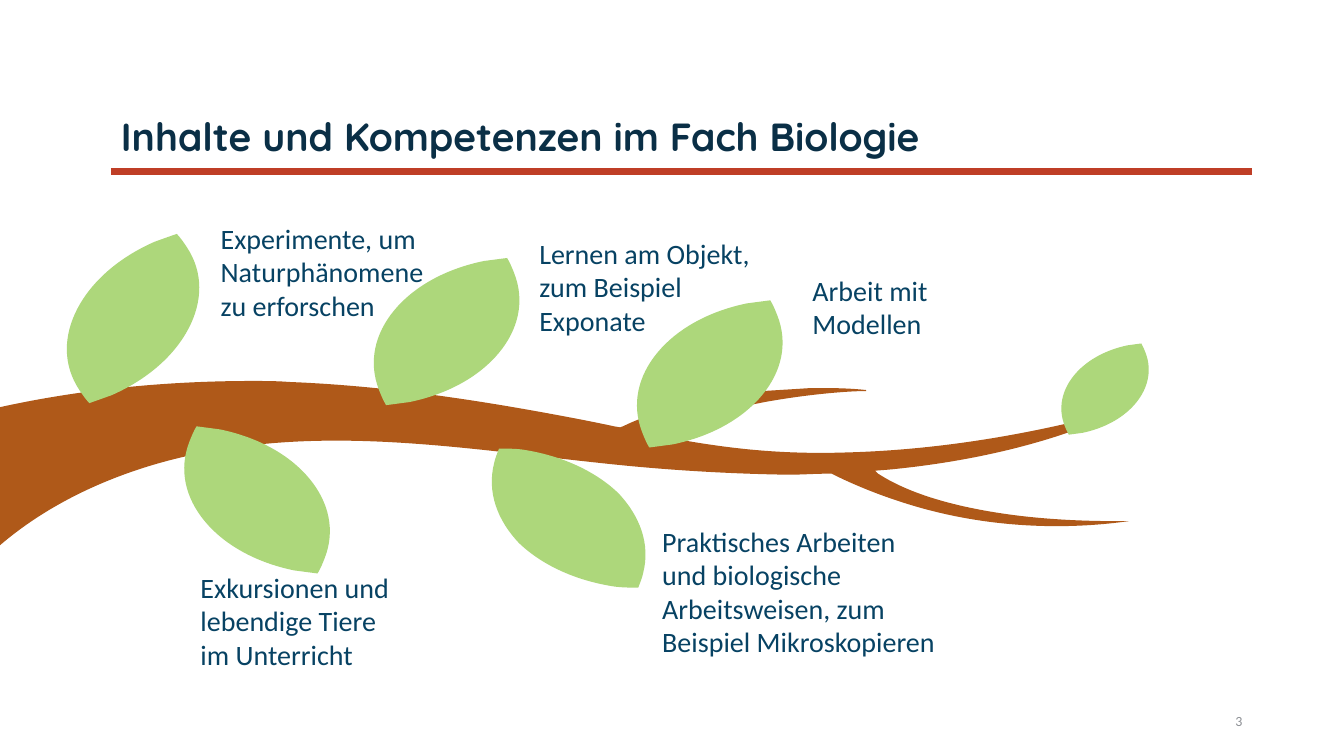
from lxml import etree
from pptx import Presentation
from pptx.dml.color import RGBColor
from pptx.enum import shapes, text
from pptx.oxml.ns import qn
from pptx.util import Inches, Pt

NAVY = RGBColor(0x0A, 0x2F, 0x46)
BLUE = RGBColor(0x07, 0x42, 0x63)
RED = RGBColor(0xBF, 0x3E, 0x26)
BROWN = RGBColor(0xAF, 0x59, 0x19)
GREEN = RGBColor(0xAD, 0xD7, 0x7B)
GREY = RGBColor(0x8C, 0x8F, 0x94)

# An outline is a start point, then (x, y) lines and (x1, y1, x2, y2, x, y) curves.
BRANCH = [
    (2.5, 3.78),
    (2.62, 3.78, 2.75, 3.78, 2.87, 3.79), (3.88, 3.83, 4.87, 3.99, 5.8, 4.17),
    (5.9, 4.19, 6, 4.21, 6.09, 4.23), (6.15, 4.24), (6.18, 4.23),
    (6.3, 4.17, 6.44, 4.12, 6.59, 4.07), (6.91, 3.97, 7.24, 3.91, 7.57, 3.88),
    (7.73, 3.87, 7.89, 3.86, 8.05, 3.85), (8.23, 3.85, 8.41, 3.85, 8.59, 3.87),
    (8.59, 3.88),
    (8.42, 3.88, 8.02, 3.91, 7.58, 3.99), (7.27, 4.05, 6.94, 4.14, 6.66, 4.29),
    (6.58, 4.33), (6.67, 4.35),
    (7.17, 4.44, 7.69, 4.51, 8.37, 4.49), (9.18, 4.47, 9.97, 4.35, 10.72, 4.17),
    (10.88, 4.13, 11.04, 4.08, 11.2, 4.03), (11.2, 4.04),
    (11.09, 4.09, 10.99, 4.14, 10.87, 4.19), (10.24, 4.44, 9.54, 4.59, 8.81, 4.66),
    (8.68, 4.67), (8.71, 4.7),
    (9.08, 4.94, 9.63, 5.06, 10.13, 5.12), (10.65, 5.18, 11.1, 5.17, 11.2, 5.17),
    (11.2, 5.17),
    (10.49, 5.27, 9.76, 5.22, 9.1, 5.03), (8.72, 4.92, 8.43, 4.79, 8.27, 4.71),
    (8.25, 4.7), (8.21, 4.7),
    (8.08, 4.7, 7.95, 4.71, 7.82, 4.71), (7.18, 4.7, 6.55, 4.66, 5.92, 4.59),
    (4.7, 4.46, 3.47, 4.26, 2.26, 4.45), (1.37, 4.58, 0.57, 4.92, 0, 5.41),
    (0, 4.04), (0.77, 3.87, 1.62, 3.78, 2.5, 3.78),
]
# One side of a leaf around its centre; the other side is its point reflection.
SLIM_SIDE = [
    (0.6, -0.73),
    (0.52, -0.72, 0.45, -0.71, 0.37, -0.7), (-0.02, -0.62, -0.33, -0.44, -0.52, -0.21),
    (-0.71, 0.02, -0.78, 0.3, -0.67, 0.58), (-0.65, 0.63, -0.63, 0.68, -0.6, 0.73),
]
WIDE_SIDE = [
    (0.49, -0.25),
    (0.27, -0.46, -0.06, -0.62, -0.46, -0.68), (-0.54, -0.69, -0.61, -0.69, -0.69, -0.69),
    (-0.71, -0.64, -0.73, -0.59, -0.74, -0.54), (-0.81, -0.26, -0.71, 0.02, -0.49, 0.25),
]
# side, half width, half height, centre x, centre y, scale x (negative mirrors), scale y, rotation
LEAVES = [
    (SLIM_SIDE, 0.72, 0.73, 4.43, 3.29, 1, 1, 0),
    (SLIM_SIDE, 0.72, 0.73, 1.32, 3.16, 1, 1, 347.9),
    (SLIM_SIDE, 0.72, 0.73, 7.04, 3.71, 1, 1, 0),
    (WIDE_SIDE, 0.76, 0.69, 5.64, 5.14, 1, 1, 0),
    (SLIM_SIDE, 0.72, 0.73, 2.55, 4.96, -1, 1, 0),
    (SLIM_SIDE, 0.72, 0.73, 10.96, 3.86, 0.6, 0.62, 0),
]
LABELS = [
    (2.09, 2.14, 2.72, 1.11, ["Experimente, um", "Naturphänomene", "zu erforschen"]),
    (5.25, 2.29, 2.58, 1.11, ["Lernen am Objekt, zum Beispiel Exponate"]),
    (7.96, 2.66, 1.71, 0.77, ["Arbeit mit", "Modellen"]),
    (1.89, 5.6, 2.56, 1.11, ["Exkursionen und", "lebendige Tiere", "im Unterricht"]),
    (6.47, 5.14, 2.97, 1.45,
     ["Praktisches Arbeiten und biologische Arbeitsweisen, zum Beispiel Mikroskopieren"]),
]


def add_outline(outline, left, top, right, bottom, color):
    """Add a filled outline with true curves, framed by the given edges."""
    builder = slide.shapes.build_freeform(Inches(left), Inches(top))
    builder.add_line_segments([(Inches(right), Inches(bottom))], close=False)
    plant_part = builder.convert_to_shape()
    contour = next(plant_part._element.iter(qn("a:path")))
    for step in list(contour):
        contour.remove(step)
    for index, segment in enumerate(outline):
        tag = "a:cubicBezTo" if len(segment) == 6 else "a:lnTo" if index else "a:moveTo"
        step = etree.SubElement(contour, qn(tag))
        for x, y in zip(segment[::2], segment[1::2]):
            etree.SubElement(step, qn("a:pt"), x=str(int(Inches(x - left))),
                             y=str(int(Inches(y - top))))
    etree.SubElement(contour, qn("a:close"))
    plant_part.fill.solid()
    plant_part.fill.fore_color.rgb = color
    plant_part.line.fill.background()
    plant_part.shadow.inherit = False
    return plant_part


def write(paragraph, words, font_name, size, color):
    run = paragraph.add_run()
    run.text = words
    run.font.name, run.font.size = font_name, Pt(size)
    run.font.color.rgb = color
    return run


prs = Presentation()
prs.slide_width, prs.slide_height = Inches(13.33), Inches(7.5)
slide = prs.slides.add_slide(prs.slide_layouts[5])

title = slide.shapes.title
title.left, title.top, title.width, title.height = map(Inches, (1.1, 1.07, 11.31, 0.62))
title.text_frame.vertical_anchor = text.MSO_ANCHOR.MIDDLE
heading = title.text_frame.paragraphs[0]
heading.alignment = text.PP_ALIGN.LEFT
heading.line_spacing = 0.9
write(heading, "Inhalte und Kompetenzen im Fach Biologie", "Quicksand", 28, NAVY).font.bold = True

rule = slide.shapes.add_connector(
    shapes.MSO_CONNECTOR.STRAIGHT, Inches(1.1), Inches(1.7), Inches(12.42), Inches(1.7))
rule.line.color.rgb = RED
rule.line.width = Pt(4.5)
etree.SubElement(rule._element.spPr, qn("a:effectLst"))

page_number = slide.shapes.add_textbox(*map(Inches, (9.42, 6.95, 3, 0.4))).text_frame
page_number.word_wrap = True
page_number.vertical_anchor = text.MSO_ANCHOR.MIDDLE
page_number.paragraphs[0].alignment = text.PP_ALIGN.RIGHT
write(page_number.paragraphs[0], "3", "Calibri", 10, GREY)

add_outline(BRANCH, 0, 3.78, 11.2, 5.41, BROWN)

for side, half_width, half_height, center_x, center_y, scale_x, scale_y, angle in LEAVES:
    both_sides = side + [tuple(-value for value in curve) for curve in side[1:]]
    placed = [tuple(center_y + scale_y * value if i % 2 else center_x + scale_x * value
                    for i, value in enumerate(segment)) for segment in both_sides]
    reach_x, reach_y = half_width * abs(scale_x), half_height * scale_y
    leaf = add_outline(placed, center_x - reach_x, center_y - reach_y,
                       center_x + reach_x, center_y + reach_y, GREEN)
    leaf.rotation = angle

for left, top, width, height, lines in LABELS:
    label = slide.shapes.add_textbox(*map(Inches, (left, top, width, height))).text_frame
    label.word_wrap = True
    label.auto_size = text.MSO_AUTO_SIZE.SHAPE_TO_FIT_TEXT
    label.vertical_anchor = text.MSO_ANCHOR.MIDDLE
    for index, line in enumerate(lines):
        paragraph = label.add_paragraph() if index else label.paragraphs[0]
        write(paragraph, line, "Calibri", 20, BLUE)

prs.save("out.pptx")
